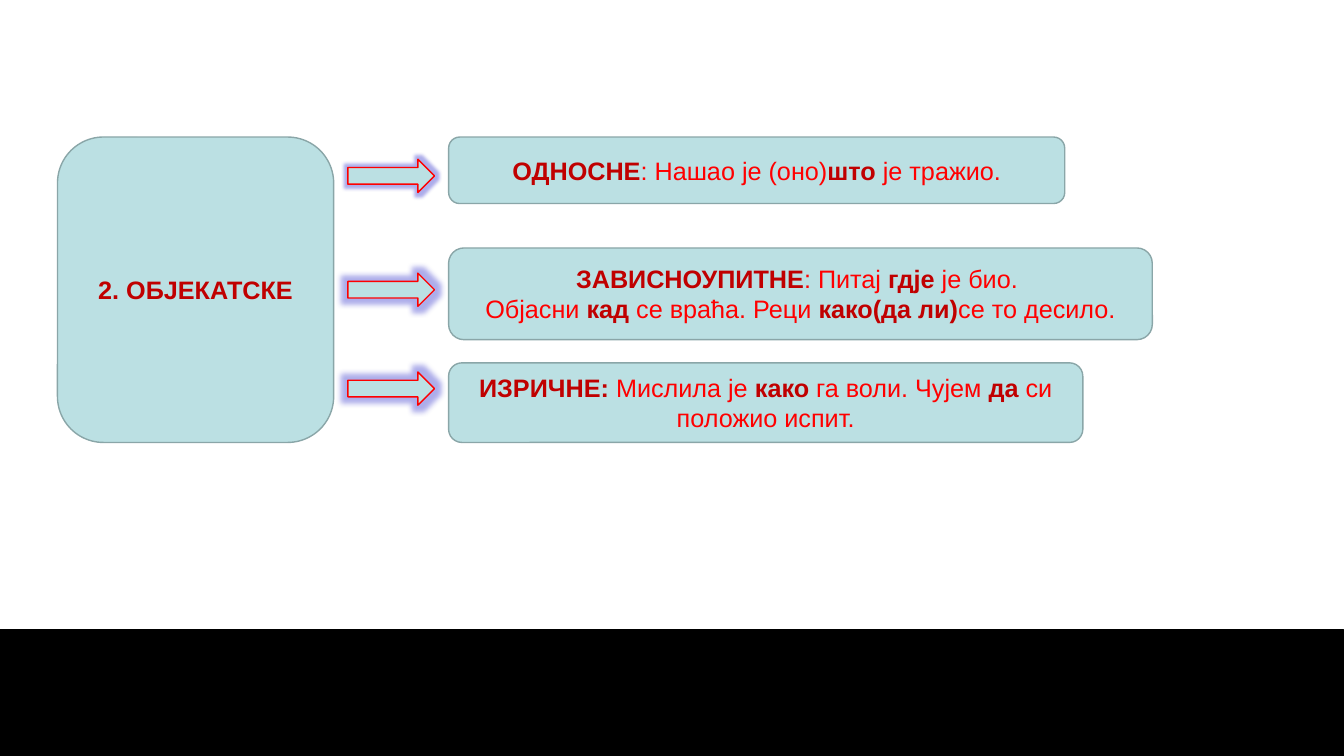
from lxml import etree
from pptx import Presentation, util as u
from pptx.dml.color import RGBColor
from pptx.enum import shapes, text
from pptx.oxml import ns

WIDE, HIGH = u.Inches(13.33), u.Inches(7.5)
HUES = {
    "band": "000000",
    "box": "BBE0E3",
    "edge": "8AA6A8",
    "key": "C00000",
    "plain": "FF0000",
    "glow": "3333CC",
}
KIND = shapes.MSO_SHAPE
TOP, LEFT = 18.13, 33.38
CLAUSES = [
    (TOP, 45.84, 8.8, 21.07, 5,
     "*ОДНОСНЕ*: Нашао је (оно)*што* је тражио."),
    (32.8, 52.36, 12.13, 36.13, 8,
     "*ЗАВИСНОУПИТНЕ*: Питај *гдје* је био. \n"
     "Објасни *кад* се враћа. Реци *како(да ли)*се то десило."),
    (48, 47.19, 10.53, 49.2, 8,
     "*ИЗРИЧНЕ:* Мислила је *како* га воли. Чујем *да* си положио испит."),
]


def hue(name):
    return RGBColor.from_string(HUES[name])


def draw(slide, kind, x, y, w, h, fill="box", edge="edge", line=1):
    spot = [int(WIDE * x / 100), int(HIGH * y / 100),
            int(WIDE * w / 100), int(HIGH * h / 100)]
    shape = slide.shapes.add_shape(kind, *spot)
    shape.shadow.inherit = False
    shape.fill.solid()
    shape.fill.fore_color.rgb = hue(fill)
    shape.line.color.rgb = hue(edge)
    shape.line.width = u.Pt(line)
    return shape


def write(shape, words, size=18, face="Arial", key="key", plain="plain"):
    frame = shape.text_frame
    frame.word_wrap = True
    frame.vertical_anchor = text.MSO_ANCHOR.MIDDLE
    para = frame.paragraphs[0]
    para.alignment = text.PP_ALIGN.CENTER
    for row, part in enumerate(words.split("\n")):
        if row:
            para.add_line_break()
        for spot, piece in enumerate(part.split("*")):
            if piece:
                strong = spot % 2 == 1
                run = para.add_run()
                run.text = piece
                run.font.size = u.Pt(size)
                run.font.name = face
                run.font.bold = strong
                run.font.color.rgb = hue(key if strong else plain)


def box(slide, x, y, w, h, words):
    write(draw(slide, KIND.ROUNDED_RECTANGLE, x, y, w, h), words)


def arrow(slide, y, blur):
    shape = draw(slide, KIND.RIGHT_ARROW, 25.88, y, 6.45, 4.4, edge="plain")
    list_ = shape.element.spPr.find(ns.qn("a:effectLst"))
    glow = etree.SubElement(list_, ns.qn("a:glow"), rad=str(u.Pt(blur)))
    tint = etree.SubElement(glow, ns.qn("a:srgbClr"), val=HUES["glow"])
    etree.SubElement(tint, ns.qn("a:alpha"), val="40000")


def main():
    deck = Presentation()
    deck.slide_width, deck.slide_height = WIDE, HIGH
    slide = deck.slides.add_slide(deck.slide_layouts[6])
    draw(slide, KIND.RECTANGLE, 0, 83.33, 100, 16.67,
         fill="band", edge="band", line=0.75)
    box(slide, 4.28, TOP, 20.55, 40.4, "*2. ОБЈЕКАТСКЕ*")
    for y, w, h, tip, blur, words in CLAUSES:
        arrow(slide, tip, blur)
        box(slide, LEFT, y, w, h, words)
    deck.save("out.pptx")


if __name__ == "__main__":
    main()
